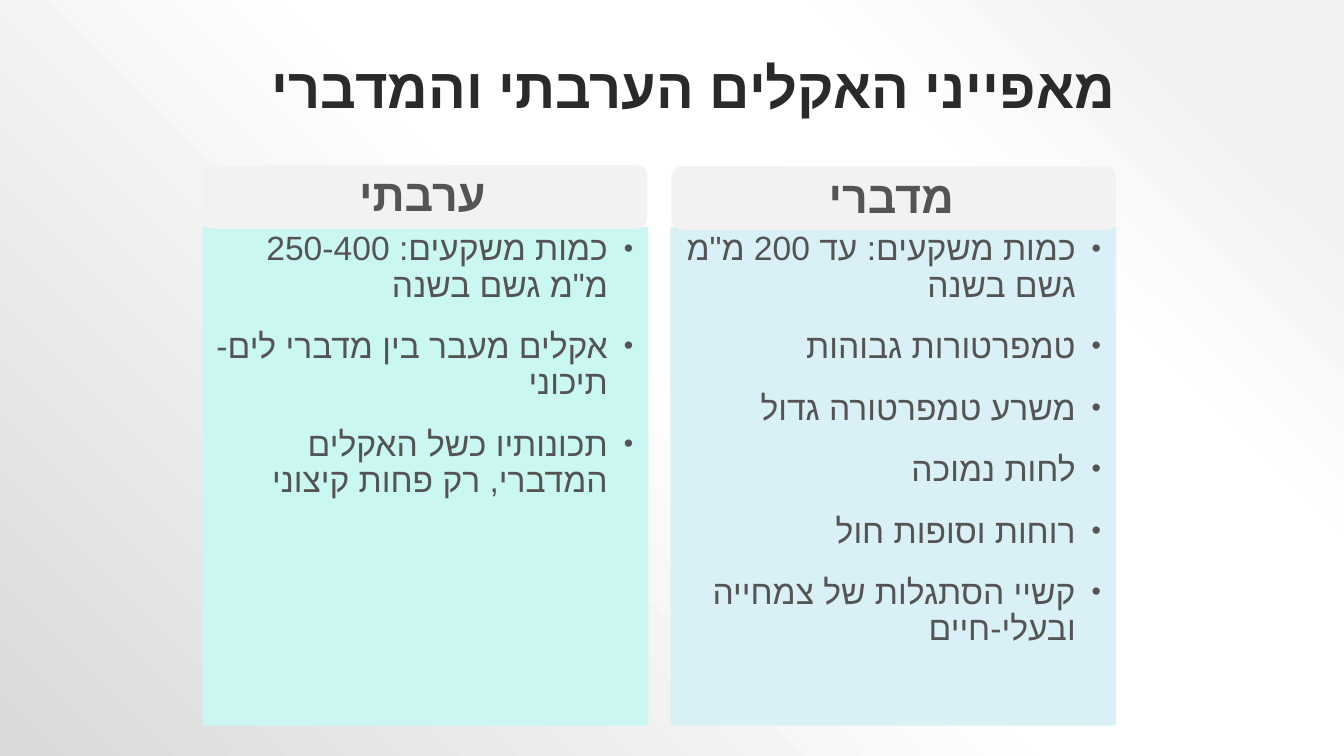
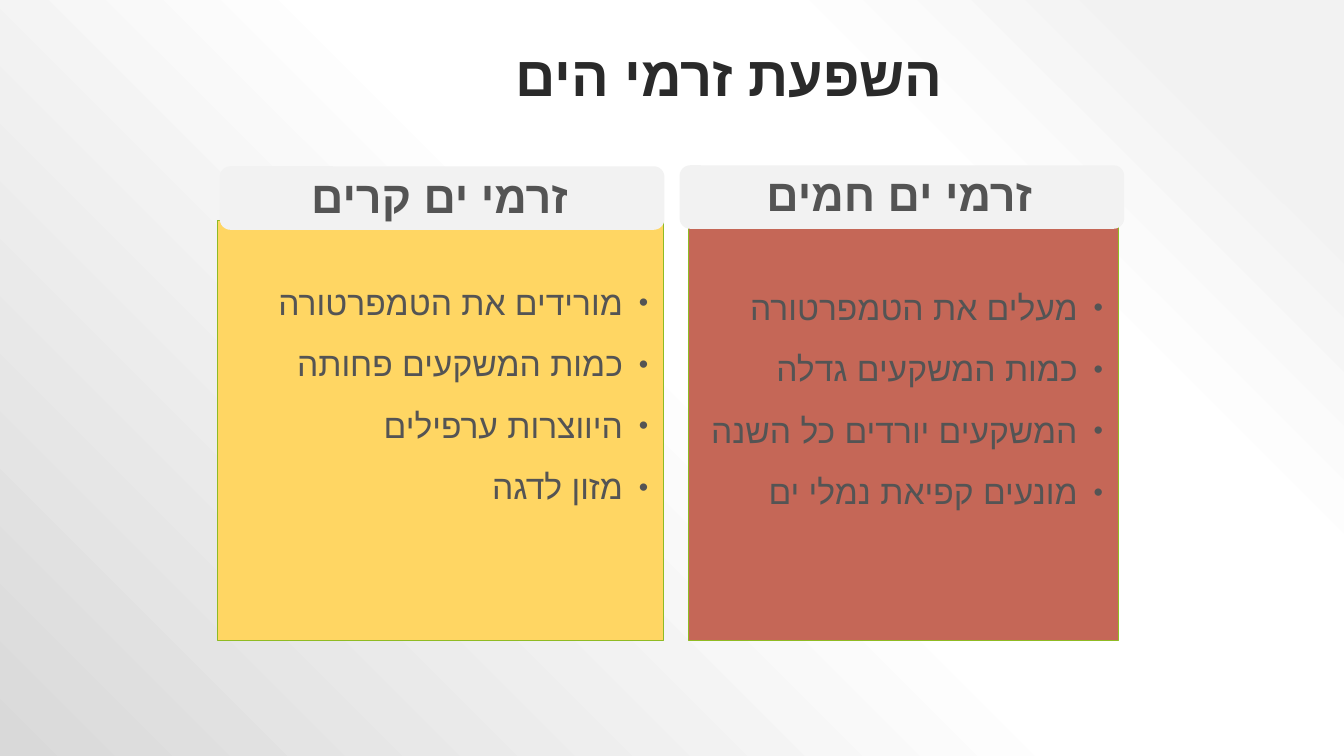
from lxml.etree import SubElement, fromstring
from pptx import Presentation
from pptx.dml.color import RGBColor
from pptx.enum.shapes import MSO_SHAPE
from pptx.enum.text import MSO_ANCHOR, MSO_AUTO_SIZE, PP_ALIGN
from pptx.oxml.ns import nsdecls, qn
from pptx.util import Inches, Pt

INK = RGBColor(0x2A, 0x2A, 0x2A)
GREY = RGBColor(0x54, 0x54, 0x54)
BAND = RGBColor(0xF2, 0xF2, 0xF2)
BLUE = RGBColor(0xD9, 0xF1, 0xF6)
MINT = RGBColor(0xCA, 0xF7, 0xF1)
YELLOW = RGBColor(0xFF, 0xD6, 0x63)
RED = RGBColor(0xC5, 0x67, 0x57)
GREEN = RGBColor(0x90, 0xBB, 0x23)

TITLE = dict(name="Roboto", size=Pt(40), bold=True)
HEAD = dict(name="TeX Gyre Adventor", size=Pt(32), bold=True)
BODY = dict(name="Roboto", size=Pt(24), bold=False)

TITLE_H = 1.25
HEAD_W, HEAD_H = 4.41, 0.63
LABEL_DX, LABEL_DY, LABEL_W, LABEL_H = 0.15, -0.03, 4.06, 0.64
BACKGROUND_STOPS = [(10, BAND), (28, "FFFFFF"), (48, "FFFFFF"), (100, "D9D9D9")]

# title_box: left, top, width
# columns: head text, fill, head left and top, body left and width, top inset, items
SLIDES = [
    dict(
        title="מאפייני האקלים הערבתי והמדברי", title_box=(2.16, 0, 9),
        top=2.25, height=4.95, line=None,
        columns=[
            ("מדברי", BLUE, 6.66, 1.65, 6.65, 4.42, 0.05, [
                "כמות משקעים: עד 200 מ\"מ גשם בשנה",
                "טמפרטורות גבוהות",
                "משרע טמפרטורה גדול",
                "לחות נמוכה",
                "רוחות וסופות חול",
                "קשיי הסתגלות של צמחייה ובעלי-חיים"]),
            ("ערבתי", MINT, 2.01, 1.64, 2.01, 4.42, 0.05, [
                "כמות משקעים: 250-400 מ\"מ גשם בשנה",
                "אקלים מעבר בין מדברי לים- תיכוני",
                "תכונותיו כשל האקלים המדברי, רק פחות קיצוני"]),
        ]),
    dict(
        title="השפעת זרמי הים", title_box=(4.54, -0.12, 4.91),
        top=2.19, height=4.16, line=GREEN,
        columns=[
            ("זרמי ים קרים", YELLOW, 2.18, 1.65, 2.16, 4.42, 0.65, [
                "מורידים את הטמפרטורה",
                "כמות המשקעים פחותה",
                "היווצרות ערפילים",
                "מזון לדגה"]),
            ("זרמי ים חמים", RED, 6.74, 1.64, 6.83, 4.26, 0.7, [
                "מעלים את הטמפרטורה",
                "כמות המשקעים גדלה",
                "המשקעים יורדים כל השנה",
                "מונעים קפיאת נמלי ים"]),
        ]),
]


def place(sp, left, top, width, height):
    sp.left, sp.top, sp.width, sp.height = map(Inches, (left, top, width, height))


def write(tf, lines, style, color, align, anchor, spacing=0.9, bullets=False):
    """Fill a text frame with right-to-left paragraphs."""
    tf.word_wrap = True
    tf.auto_size = MSO_AUTO_SIZE.NONE
    tf.vertical_anchor = anchor
    for i, line in enumerate(lines):
        p = tf.add_paragraph() if i else tf.paragraphs[0]
        p.alignment = align
        p.line_spacing = spacing
        p.space_before = Pt(18 if bullets else 0)
        pPr = p._p.get_or_add_pPr()
        pPr.set("rtl", "1")
        if bullets:
            pPr.set("marL", str(Inches(0.3)))
            pPr.set("marR", "0")
            pPr.set("indent", str(Inches(-0.25)))
            SubElement(SubElement(pPr, qn("a:buClr")), qn("a:srgbClr"), val=str(color))
            SubElement(pPr, qn("a:buSzPct"), val="80000")
            SubElement(pPr, qn("a:buFont"), typeface="Arial")
            SubElement(pPr, qn("a:buChar"), char="•")
        r = p.add_run()
        r.text = line
        for key, value in style.items():
            setattr(r.font, key, value)
        r.font.color.rgb = color
        SubElement(r._r.get_or_add_rPr(), qn("a:cs"), typeface="Arial")


prs = Presentation()
prs.slide_width, prs.slide_height = Inches(13.33), Inches(7.5)

master = prs.slide_master
master.background.fill.solid()
bgPr = master.element.find(".//" + qn("p:bgPr"))
stops = "".join(f'<a:gs pos="{pos * 1000}"><a:srgbClr val="{color}"/></a:gs>'
                for pos, color in BACKGROUND_STOPS)
bgPr.replace(bgPr[0], fromstring(
    f'<a:gradFill {nsdecls("a")} rotWithShape="1"><a:gsLst>{stops}</a:gsLst>'
    '<a:path path="circle"><a:fillToRect l="100000" b="100000"/></a:path></a:gradFill>'))

layout = prs.slide_layouts.get_by_name("Two Content")
for page in SLIDES:
    s = prs.slides.add_slide(layout)
    title, *bodies = s.placeholders
    place(title, *page["title_box"], TITLE_H)
    write(title.text_frame, [page["title"]], TITLE, INK, PP_ALIGN.RIGHT, MSO_ANCHOR.BOTTOM)

    for body, column in zip(bodies, page["columns"]):
        head, fill, head_left, head_top, left, width, inset, items = column
        place(body, left, page["top"], width, page["height"])
        body.fill.solid()
        body.fill.fore_color.rgb = fill
        if page["line"]:
            body.line.color.rgb = page["line"]
            body.line.width = Pt(0.5)
        body.text_frame.margin_top = Inches(inset)
        write(body.text_frame, items, BODY, GREY, PP_ALIGN.RIGHT, MSO_ANCHOR.TOP, bullets=True)

        sp = s.shapes.add_shape(MSO_SHAPE.ROUNDED_RECTANGLE, *map(
            Inches, (head_left, head_top, HEAD_W, HEAD_H)))
        sp.shadow.inherit = False
        sp.fill.solid()
        sp.fill.fore_color.rgb = BAND
        sp.line.fill.background()

        label = s.shapes.add_textbox(*map(Inches, (
            head_left + LABEL_DX, head_top + LABEL_DY, LABEL_W, LABEL_H)))
        write(label.text_frame, [head], HEAD, GREY, PP_ALIGN.CENTER, MSO_ANCHOR.TOP, spacing=1.0)

prs.save("out.pptx")
